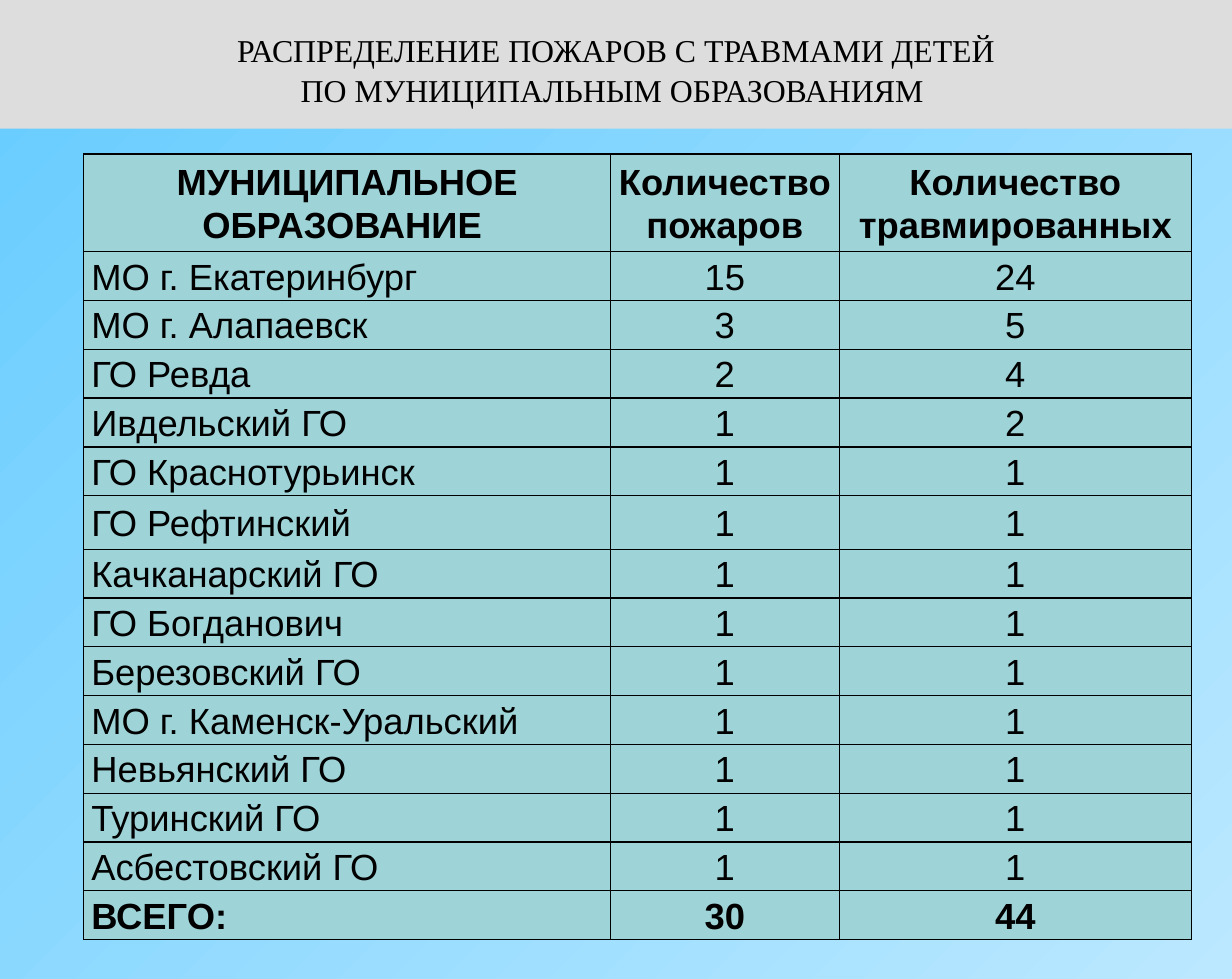
from dataclasses import dataclass

from lxml.etree import SubElement
from pptx import Presentation
from pptx.dml.color import RGBColor
from pptx.enum.shapes import MSO_SHAPE
from pptx.enum.text import MSO_ANCHOR, PP_ALIGN
from pptx.oxml.ns import qn
from pptx.util import Pt


@dataclass(frozen=True)
class Theme:
    sky: RGBColor = RGBColor(0x66, 0xCC, 0xFF)
    pale_sky: RGBColor = RGBColor(0xBB, 0xE8, 0xFF)
    banner: RGBColor = RGBColor(0xDD, 0xDD, 0xDD)
    cell: RGBColor = RGBColor(0x9E, 0xD3, 0xD7)
    ink: RGBColor = RGBColor(0, 0, 0)
    title_font: str = "Times New Roman"
    table_font: str = "Arial"
    title_size: int = 21
    table_size: int = 24
    border: int = 1


THEME = Theme()
PAGE_WIDTH, PAGE_HEIGHT = 813.6, 646.56

TITLE = ("РАСПРЕДЕЛЕНИЕ ПОЖАРОВ С ТРАВМАМИ ДЕТЕЙ", "ПО МУНИЦИПАЛЬНЫМ ОБРАЗОВАНИЯМ ")
ROWS = [
    ("МУНИЦИПАЛЬНОЕ ОБРАЗОВАНИЕ ", "Количество пожаров", "Количество травмированных"),
    ("МО г. Екатеринбург", 15, 24),
    ("МО г. Алапаевск", 3, 5),
    ("ГО Ревда", 2, 4),
    ("Ивдельский ГО", 1, 2),
    ("ГО Краснотурьинск", 1, 1),
    ("ГО Рефтинский", 1, 1),
    ("Качканарский ГО", 1, 1),
    ("ГО Богданович", 1, 1),
    ("Березовский ГО", 1, 1),
    ("МО г. Каменск-Уральский", 1, 1),
    ("Невьянский ГО", 1, 1),
    ("Туринский ГО", 1, 1),
    ("Асбестовский ГО", 1, 1),
    ("ВСЕГО:", 30, 44),
]
COLUMN_WIDTHS = (347.8, 151.2, 232.5)
ROW_HEIGHT = 32.25
SPECIAL_HEIGHTS = {0: 2 * ROW_HEIGHT, 6: 35.4}


def set_font(para, name, size, bold=False):
    para.font.name = name
    para.font.size = Pt(size)
    para.font.bold = bold
    para.font.color.rgb = THEME.ink


def paint_background(page):
    fill = page.background.fill
    fill.gradient()
    fill.gradient_angle = 315
    for stop, colour in zip(fill.gradient_stops, (THEME.sky, THEME.pale_sky)):
        stop.color.rgb = colour


def add_banner(page, left, top, width, height):
    banner = page.shapes.add_shape(
        MSO_SHAPE.RECTANGLE, Pt(left), Pt(top), Pt(width), Pt(height))
    banner.shadow.inherit = False
    banner.fill.solid()
    banner.fill.fore_color.rgb = THEME.banner
    banner.line.fill.background()
    frame = banner.text_frame
    frame.word_wrap = True
    frame.vertical_anchor = MSO_ANCHOR.MIDDLE
    frame.margin_left = frame.margin_right = Pt(8.5)
    frame.margin_top, frame.margin_bottom = Pt(9), Pt(1.5)
    for index, line in enumerate(TITLE):
        para = frame.add_paragraph() if index else frame.paragraphs[0]
        para.text = line
        para.alignment = PP_ALIGN.CENTER
        if index:
            para.space_before = Pt(1)
        set_font(para, THEME.title_font, THEME.title_size)


def add_borders(cell):
    properties = cell._tc.get_or_add_tcPr()
    for position, side in enumerate(("a:lnL", "a:lnR", "a:lnT", "a:lnB")):
        line = SubElement(properties, qn(side), w=str(Pt(THEME.border)))
        fill = SubElement(line, qn("a:solidFill"))
        SubElement(fill, qn("a:srgbClr"), val=str(THEME.ink))
        properties.insert(position, line)


def fill_cell(cell, text, alignment, bold):
    cell.fill.solid()
    cell.fill.fore_color.rgb = THEME.cell
    add_borders(cell)
    cell.vertical_anchor = MSO_ANCHOR.MIDDLE
    cell.margin_left = cell.margin_right = Pt(5)
    cell.margin_top = cell.margin_bottom = Pt(0)
    para = cell.text_frame.paragraphs[0]
    para.text = str(text)
    para.alignment = alignment
    para.line_spacing = 1.07
    set_font(para, THEME.table_font, THEME.table_size, bold)


def add_fire_table(page, left, top):
    heights = [SPECIAL_HEIGHTS.get(row, ROW_HEIGHT) for row in range(len(ROWS))]
    table = page.shapes.add_table(
        len(ROWS), len(COLUMN_WIDTHS), Pt(left), Pt(top),
        Pt(sum(COLUMN_WIDTHS)), Pt(sum(heights))).table
    table.first_row = table.horz_banding = False
    for column, width in zip(table.columns, COLUMN_WIDTHS):
        column.width = Pt(width)
    for row_index, (values, height) in enumerate(zip(ROWS, heights)):
        table.rows[row_index].height = Pt(height)
        bold = row_index in (0, len(ROWS) - 1)
        for column_index, value in enumerate(values):
            is_name = row_index > 0 and column_index == 0
            alignment = PP_ALIGN.JUSTIFY if is_name else PP_ALIGN.CENTER
            fill_cell(table.cell(row_index, column_index), value, alignment, bold)


def main():
    deck = Presentation()
    deck.slide_width, deck.slide_height = Pt(PAGE_WIDTH), Pt(PAGE_HEIGHT)
    page = deck.slides.add_slide(deck.slide_layouts[6])
    paint_background(page)
    add_banner(page, 0, 0, PAGE_WIDTH, 85)
    add_fire_table(page, 55.3, 101.7)
    deck.save("out.pptx")


if __name__ == "__main__":
    main()
